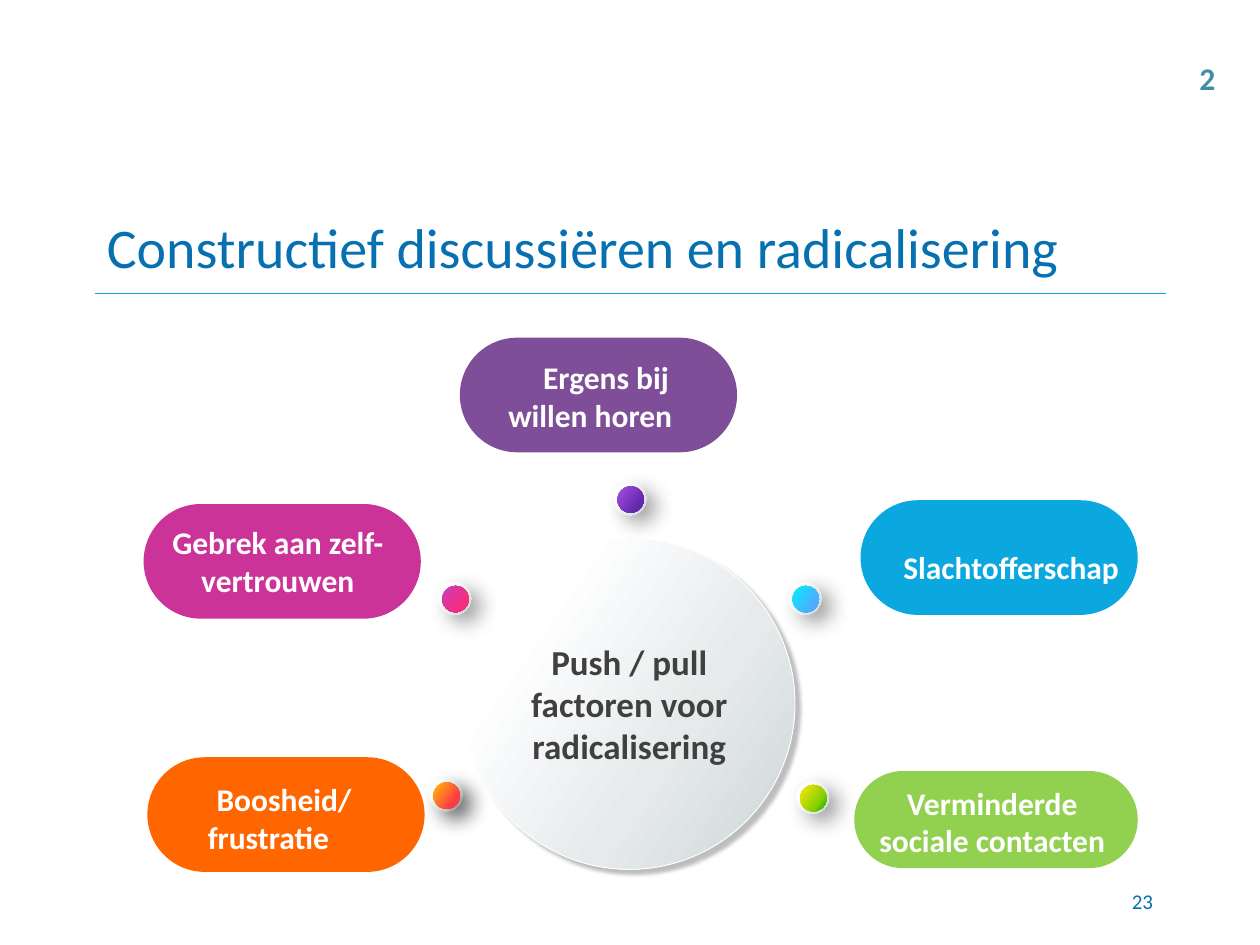
"""Build the slide on push and pull factors of radicalisation."""
from dataclasses import dataclass
from typing import Optional

from lxml.etree import SubElement
from pptx import Presentation
from pptx.dml.color import RGBColor
from pptx.enum.shapes import MSO_CONNECTOR, MSO_SHAPE
from pptx.enum.text import MSO_ANCHOR, PP_ALIGN
from pptx.oxml.ns import qn
from pptx.util import Emu, Pt

PX = 9144
FONT = "Calibri"
HALO_SIZE, CORE_SIZE, CORE_OFFSET = 26, 21, 3
COLORS = {
    "title": "0770B1", "rule": "0BA7DF", "corner": "3E8EA9", "hub": "404040",
    "white": "FFFFFF", "shadow": "000000", "anger": "FF6600", "confidence": "CC3399",
    "belonging": "7E4E99", "victim": "0BA7DF", "contacts": "92D050",
}
SILVER = ((23, "FFFFFF"), (63, "E6EAEB"), (100, "CDD5D8"))


@dataclass(frozen=True)
class Box:
    left: int
    top: int
    width: int
    height: int

    def emu(self) -> tuple:
        return tuple(Emu(n * PX) for n in (self.left, self.top, self.width, self.height))


@dataclass(frozen=True)
class Shadow:
    opacity: int
    blur: float
    distance: float


@dataclass(frozen=True)
class Style:
    size: int
    color: str
    bold: bool = False
    align: PP_ALIGN = PP_ALIGN.LEFT
    anchor: MSO_ANCHOR = MSO_ANCHOR.TOP
    inset: tuple = (10, 5)
    wrap: bool = True
    indent: int = 0


@dataclass(frozen=True)
class Factor:
    label: str
    color: str
    pill: Box
    label_box: Box
    dot: tuple
    gradient: tuple
    align: PP_ALIGN = PP_ALIGN.CENTER
    indent: int = 0
    core_shadow: Optional[Shadow] = None


HUB_SHADOW = Shadow(26, 2, 3.7)
DOT_SHADOW = Shadow(38, 12, 7.1)
FACTORS = (
    Factor("Boosheid/ frustratie", "anger", Box(117, 601, 220, 91),
           Box(139, 615, 148, 68), (341, 618),
           ((0, "FFC203"), (37, "FF7D25"), (77, "FF3847")),
           indent=25, core_shadow=DOT_SHADOW),
    Factor("Gebrek aan zelf-vertrouwen", "confidence", Box(114, 400, 220, 91),
           Box(117, 411, 207, 68), (348, 462),
           ((1, "C23FC6"), (36, "E1359B"), (98, "FF2A70"))),
    Factor("Ergens bij willen horen", "belonging", Box(365, 268, 220, 91),
           Box(387, 280, 163, 68), (487, 383),
           ((0, "A852E6"), (37, "863DC8"), (77, "6428AA")), indent=25),
    Factor("Slachtofferschap", "victim", Box(683, 397, 220, 91),
           Box(713, 431, 204, 38), (626, 462),
           ((0, "00F2FE"), (37, "28CFFE"), (77, "4FACFE")), align=PP_ALIGN.LEFT),
    Factor("Verminderde sociale contacten", "contacts", Box(678, 612, 225, 77),
           Box(685, 618, 205, 68), (632, 620),
           ((0, "FFEA03"), (71, "85CE02"), (98, "0CB100"))),
)


def rgb(name: str) -> RGBColor:
    return RGBColor.from_string(COLORS[name])


def write(shape, text: str, style: Style) -> None:
    frame = shape.text_frame
    frame.word_wrap = style.wrap
    frame.vertical_anchor = style.anchor
    frame.margin_left = frame.margin_right = Emu(style.inset[0] * PX)
    frame.margin_top = frame.margin_bottom = Emu(style.inset[1] * PX)
    paragraph = frame.paragraphs[0]
    paragraph.alignment = style.align
    if style.indent:
        properties = paragraph._p.get_or_add_pPr()
        properties.set("marL", "0")
        properties.set("indent", str(style.indent * PX))
    run = paragraph.add_run()
    run.text = text
    run.font.name = FONT
    run.font.size = Pt(style.size)
    run.font.bold = style.bold
    run.font.color.rgb = rgb(style.color)


def add_text(slide, box: Box, text: str, style: Style) -> None:
    write(slide.shapes.add_textbox(*box.emu()), text, style)


def add_pill(slide, box: Box, color: str) -> None:
    pill = slide.shapes.add_shape(MSO_SHAPE.ROUNDED_RECTANGLE, *box.emu())
    pill.adjustments[0] = 0.5
    pill.shadow.inherit = False
    pill.fill.solid()
    pill.fill.fore_color.rgb = rgb(color)
    pill.line.fill.background()


def add_ball(slide, box: Box, stops: tuple, shadow: Optional[Shadow] = None):
    ball = slide.shapes.add_shape(MSO_SHAPE.OVAL, *box.emu())
    ball.line.fill.background()
    ball.shadow.inherit = False
    ball.fill.gradient()
    properties = ball._element.spPr
    stop_list = properties.find(qn("a:gradFill")).find(qn("a:gsLst"))
    for old_stop in list(stop_list):
        stop_list.remove(old_stop)
    for position, color in stops:
        stop = SubElement(stop_list, qn("a:gs"), pos=str(position * 1000))
        SubElement(stop, qn("a:srgbClr"), val=color)
    properties.find(qn("a:gradFill")).find(qn("a:lin")).set("ang", str(35 * 60000))
    if shadow:
        outer = SubElement(properties.find(qn("a:effectLst")), qn("a:outerShdw"),
                           blurRad=str(int(Pt(shadow.blur))), dist=str(int(Pt(shadow.distance))),
                           dir=str(39 * 60000), algn="ctr", rotWithShape="0")
        tint = SubElement(outer, qn("a:srgbClr"), val=COLORS["shadow"])
        SubElement(tint, qn("a:alpha"), val=str(shadow.opacity * 1000))
    return ball


def add_rule(slide, left: int, right: int, y: int) -> None:
    rule = slide.shapes.add_connector(
        MSO_CONNECTOR.STRAIGHT, *(Emu(n * PX) for n in (left, y, right, y)))
    rule.line.color.rgb = rgb("rule")
    rule.line.width = Pt(0.75)
    SubElement(rule._element.spPr, qn("a:effectLst"))


def add_factor(slide, factor: Factor) -> None:
    left, top = factor.dot
    add_pill(slide, factor.pill, factor.color)
    add_ball(slide, Box(left, top, HALO_SIZE, HALO_SIZE), SILVER, DOT_SHADOW)
    add_ball(slide, Box(left + CORE_OFFSET, top + CORE_OFFSET, CORE_SIZE, CORE_SIZE),
             factor.gradient, factor.core_shadow)
    add_text(slide, factor.label_box, factor.label,
             Style(18, "white", bold=True, align=factor.align, inset=(4, 4),
                   indent=factor.indent))


def main() -> None:
    deck = Presentation()
    deck.slide_width, deck.slide_height = Emu(1000 * PX), Emu(750 * PX)
    slide = deck.slides.add_slide(deck.slide_layouts[6])
    add_rule(slide, 75, 925, 233)
    add_text(slide, Box(75, 158, 850, 75), "Constructief discussiëren en radicalisering",
             Style(32, "title", anchor=MSO_ANCHOR.MIDDLE))
    hub = add_ball(slide, Box(368, 427, 263, 263), SILVER, HUB_SHADOW)
    hub.line.color.rgb = rgb("white")
    hub.line.width = Pt(0.5)
    write(hub, "Push / pull factoren voor radicalisering",
          Style(20, "hub", bold=True, align=PP_ALIGN.CENTER,
                anchor=MSO_ANCHOR.MIDDLE, inset=(4, 5)))
    for factor in FACTORS:
        add_factor(slide, factor)
    add_text(slide, Box(717, 695, 208, 40), "23",
             Style(12, "title", align=PP_ALIGN.RIGHT, anchor=MSO_ANCHOR.MIDDLE))
    add_text(slide, Box(942, 42, 33, 40), "2", Style(18, "corner", bold=True, wrap=False))
    deck.save("out.pptx")


if __name__ == "__main__":
    main()
